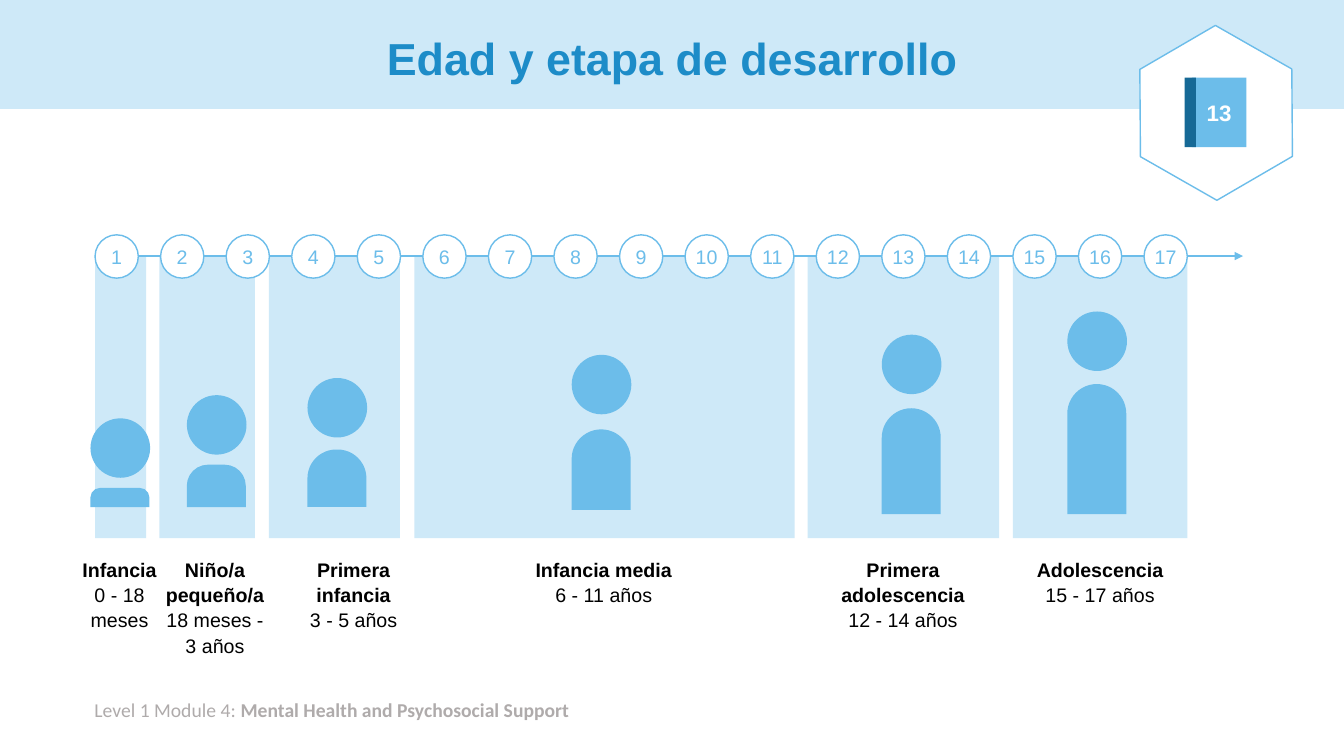
import dataclasses

import lxml.etree
import pptx
import pptx.dml.color
import pptx.enum.shapes
import pptx.enum.text
import pptx.oxml.ns
import pptx.util

SHAPES = pptx.enum.shapes.MSO_SHAPE
CENTER = pptx.enum.text.PP_ALIGN.CENTER
MIDDLE = pptx.enum.text.MSO_ANCHOR.MIDDLE


@dataclasses.dataclass(frozen=True)
class Theme:
    pale: str = "CEE9F8"
    sky: str = "6CBDEA"
    blue: str = "1D8CC8"
    navy: str = "166996"
    white: str = "FFFFFF"
    black: str = "000000"
    gray: str = "AFABAB"
    font: str = "Arial"
    footer_font: str = "Calibri"
    title_size: int = 32
    number_size: int = 16
    body_size: int = 14
    line_width: int = 1
    columns: float = 20.5
    rows: int = 15


class SlideBuilder:
    """Draws styled elements on a slide measured in grid columns and rows."""

    def __init__(self, presentation, theme):
        self.theme = theme
        self.column = presentation.slide_width / theme.columns
        self.row = presentation.slide_height / theme.rows
        self.slide = presentation.slides.add_slide(presentation.slide_layouts[5])

    def box(self, column, row, columns, rows):
        return (round(column * self.column), round(row * self.row),
                round(columns * self.column), round(rows * self.row))

    def style(self, font, size, color, bold=False, name=None):
        font.name = name or self.theme.font
        font.size = pptx.util.Pt(size)
        font.bold = bold
        font.color.rgb = pptx.dml.color.RGBColor.from_string(color)

    def group(self):
        return self.slide.shapes.add_group_shape().shapes

    def shape(self, kind, place, fill, line=None, parent=None):
        shape = (parent or self.slide.shapes).add_shape(kind, *self.box(*place))
        shape.shadow.inherit = False
        shape.fill.solid()
        shape.fill.fore_color.rgb = pptx.dml.color.RGBColor.from_string(fill)
        if line:
            shape.line.color.rgb = pptx.dml.color.RGBColor.from_string(line)
            shape.line.width = pptx.util.Pt(self.theme.line_width)
        else:
            shape.line.fill.background()
        return shape

    def caption(self, shape, text, size, color, bold=False):
        frame = shape.text_frame
        frame.margin_left = frame.margin_right = 0
        frame.margin_top = frame.margin_bottom = 0
        frame.vertical_anchor = MIDDLE
        paragraph = frame.paragraphs[0]
        paragraph.text = text
        paragraph.alignment = CENTER
        self.style(paragraph.font, size, color, bold)

    def title(self, text, place):
        title = self.slide.shapes.title
        title.left, title.top, title.width, title.height = self.box(*place)
        frame = title.text_frame
        frame.text = text
        frame.word_wrap = True
        frame.auto_size = pptx.enum.text.MSO_AUTO_SIZE.NONE
        frame.vertical_anchor = MIDDLE
        paragraph = frame.paragraphs[0]
        paragraph.alignment = CENTER
        paragraph.line_spacing = 0.9
        self.style(paragraph.font, self.theme.title_size, self.theme.blue, True)

    def header(self, rows):
        band = self.shape(SHAPES.RECTANGLE, (0, 0, self.theme.columns, rows), self.theme.pale)
        self.slide.shapes.title.element.addprevious(band.element)

    def text_box(self, place):
        frame = self.slide.shapes.add_textbox(*self.box(*place)).text_frame
        frame.word_wrap = True
        return frame

    def label(self, name, ages, place):
        frame = self.text_box(place)
        for index, text in enumerate((name, ages)):
            paragraph = frame.add_paragraph() if index else frame.paragraphs[0]
            paragraph.text = text
            paragraph.alignment = CENTER
            paragraph.line_spacing = 1.07
            self.style(paragraph.font, self.theme.body_size, self.theme.black, index == 0)

    def footer(self, module, topic, place):
        paragraph = self.text_box(place).paragraphs[0]
        for text, bold in ((module, False), (topic, True)):
            run = paragraph.add_run()
            run.text = text
            self.style(run.font, self.theme.body_size, self.theme.gray, bold, self.theme.footer_font)

    def arrow(self, start, end, row):
        left, top, width, _ = self.box(start, row, end - start, 0)
        arrow = self.slide.shapes.add_connector(
            pptx.enum.shapes.MSO_CONNECTOR.STRAIGHT, left, top, left + width, top)
        arrow.line.color.rgb = pptx.dml.color.RGBColor.from_string(self.theme.sky)
        arrow.line.width = pptx.util.Pt(self.theme.line_width)
        qn = pptx.oxml.ns.qn
        properties = arrow.element.spPr
        lxml.etree.SubElement(properties.find(qn("a:ln")), qn("a:tailEnd"), type="triangle")
        lxml.etree.SubElement(properties, qn("a:effectLst"))

    def year(self, number, column, row):
        circle = self.shape(SHAPES.OVAL, (column, row, 0.66, 0.86), self.theme.white, self.theme.sky)
        self.caption(circle, str(number), self.theme.body_size, self.theme.sky)

    def person(self, column, head_row, body_row, body_rows):
        group = self.group()
        body = self.shape(SHAPES.ROUND_2_SAME_RECTANGLE, (column, body_row, 0.9, body_rows),
                          self.theme.sky, parent=group)
        body.adjustments[0] = 0.5
        self.shape(SHAPES.OVAL, (column, head_row, 0.91, 1.18), self.theme.sky, parent=group)

    def badge(self, number):
        group = self.group()
        hexagon = self.shape(SHAPES.HEXAGON, (17.21, 0.74, 2.68, 3), self.theme.white,
                             self.theme.sky, group)
        hexagon.adjustments[0] = 0.29
        hexagon.rotation = 29.7
        book = self.shape(SHAPES.RECTANGLE, (18.18, 1.54, 0.83, 1.38), self.theme.sky, parent=group)
        self.caption(book, number, self.theme.number_size, self.theme.white, True)
        self.shape(SHAPES.RECTANGLE, (18.07, 1.54, 0.17, 1.38), self.theme.navy, parent=group)


STAGES = [
    ("Infancia", "0 - 18 meses", (1.45, 0.78), (1.38, 8.3, 9.68, 0.38), (0.95, 1.75)),
    ("Niño/a pequeño/a", "18 meses - 3 años", (2.43, 1.46), (2.85, 7.84, 9.22, 0.84), (2.29, 1.98)),
    ("Primera infancia", "3 - 5 años", (4.1, 2), (4.69, 7.5, 8.92, 1.14), (4.48, 1.83)),
    ("Infancia media", "6 - 11 años", (6.32, 5.8), (8.72, 7.04, 8.52, 1.6), (7.67, 3.08)),
    ("Primera adolescencia", "12 - 14 años", (12.32, 2.92), (13.45, 6.64, 8.1, 2.1), (12.32, 2.91)),
    ("Adolescencia", "15 - 17 años", (15.45, 2.66), (16.28, 6.18, 7.62, 2.58), (15.45, 2.66)),
]


def main():
    presentation = pptx.Presentation()
    presentation.slide_width = pptx.util.Inches(13.33)
    presentation.slide_height = pptx.util.Inches(7.5)
    theme = Theme()
    builder = SlideBuilder(presentation, theme)
    builder.header(2.16)
    builder.title("Edad y etapa de desarrollo", (1.41, 0.26, 17.69, 1.9))
    for _, _, (column, columns), _, _ in STAGES:
        builder.shape(SHAPES.RECTANGLE, (column, 5.06, columns, 5.62), theme.pale)
    builder.arrow(2.1, 18.96, 5.08)
    for year in range(1, 18):
        builder.year(year, 0.45 + year, 4.66)
    for name, ages, _, figure, (column, columns) in STAGES:
        builder.person(*figure)
        builder.label(name, ages, (column, 10.94, columns, 1.68))
    builder.badge("13")
    builder.footer("Level 1 Module 4: ", "Mental Health and Psychosocial Support", (1.29, 13.74, 9.5, 0.68))
    presentation.save("out.pptx")


if __name__ == "__main__":
    main()
